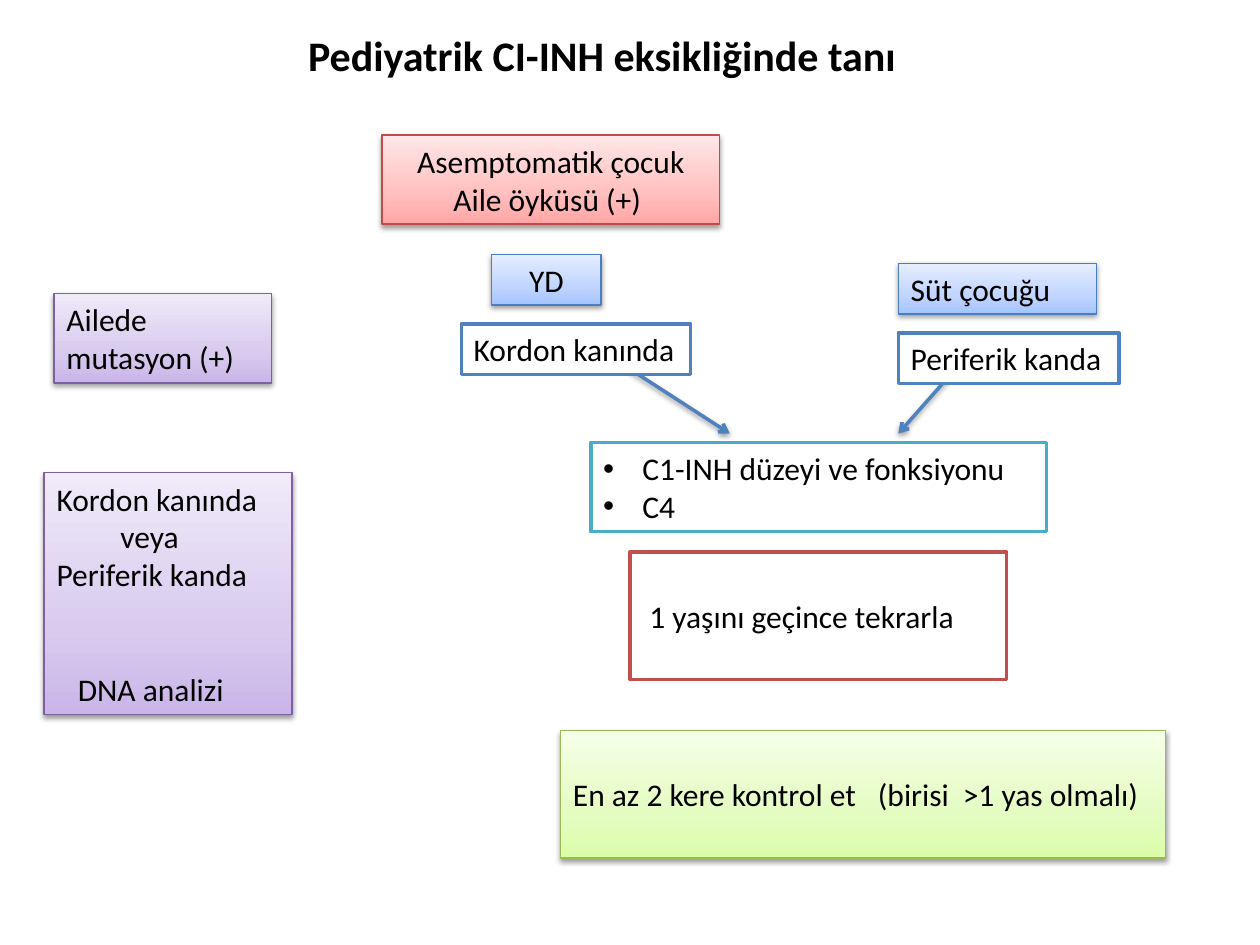
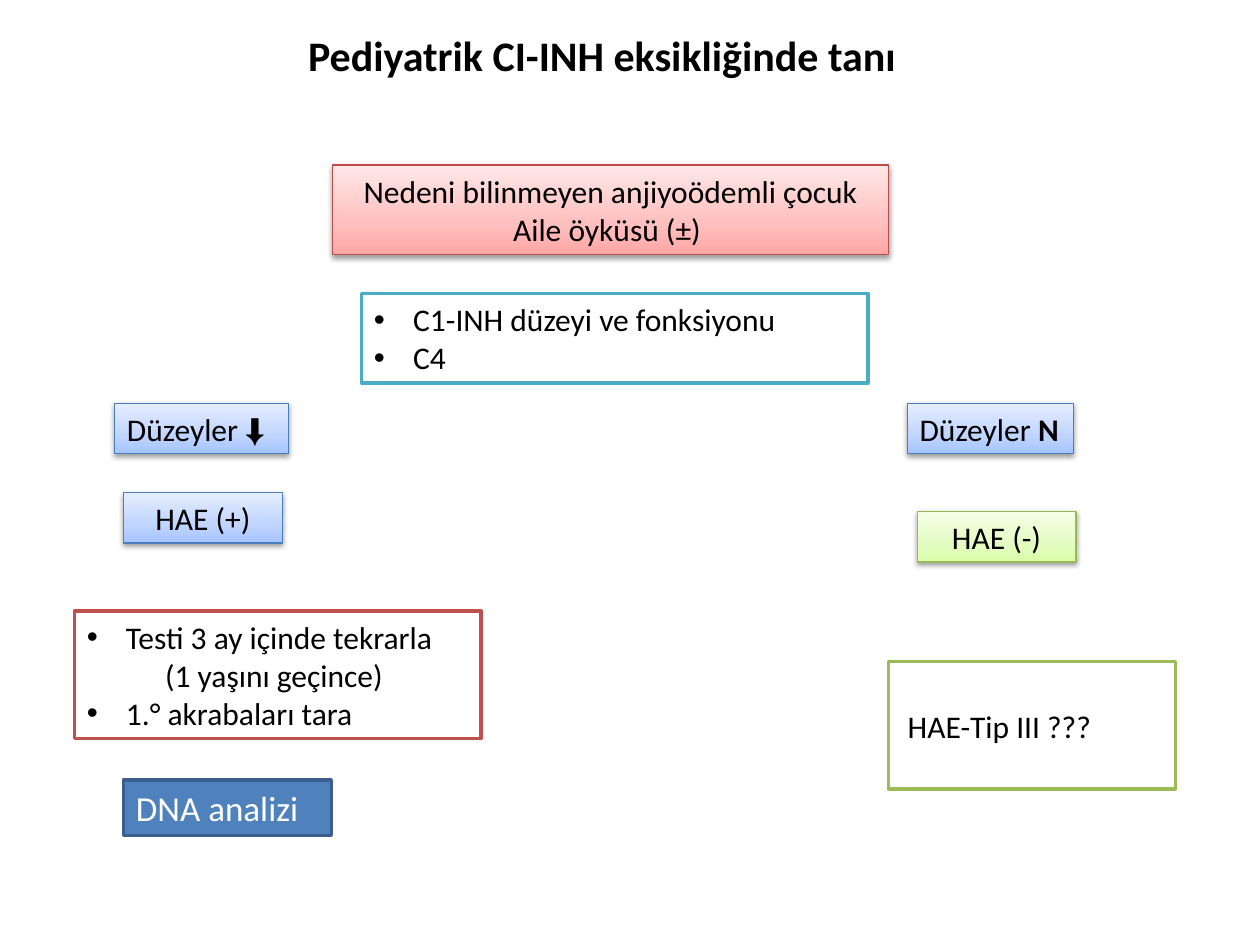
from copy import deepcopy
from dataclasses import dataclass, field

from lxml.etree import SubElement
from pptx import Presentation
from pptx.dml.color import RGBColor
from pptx.enum.shapes import MSO_CONNECTOR, MSO_SHAPE
from pptx.enum.text import MSO_ANCHOR, PP_ALIGN
from pptx.oxml.ns import qn
from pptx.util import Cm, Pt

TITLE = "Pediyatrik CI-INH eksikliğinde tanı"
ARROW_BLUE = "4F81BD"
GRADIENT_POSITIONS = (0, 0.35, 1)
LINE_H, PAIR_H, TALL_H = 1.02, 1.8, 2.57
TEXT = {"name": "Calibri", "size": Pt(18), "bold": False}
CENTER = {"alignment": PP_ALIGN.CENTER}

# A style with three fill colours is a raised box with a gradient.
STYLES = {
    "history": {"fill": ("FFA6A5", "FFC0BF", "FFE7E7"), "line": "BF4C48"},
    "group": {"fill": ("A4C4FF", "BFD4FF", "E6EEFF"), "line": "4B7EBC"},
    "outcome": {"fill": ("DAFDA7", "E4FCC2", "F5FFE7"), "line": "98B955"},
    "mutation": {"fill": ("C9B5E8", "D8CBEE", "F0EAF9"), "line": "7D60A0"},
    "lab": {"fill": ("FFFFFF",), "line": "4BACC6"},
    "repeat": {"fill": ("FFFFFF",), "line": "C0504D"},
    "sample": {"fill": ("FFFFFF",), "line": "4F81BD"},
    "question": {"fill": ("FFFFFF",), "line": "9BBB59"},
    "analysis": {"fill": ("4F81BD",), "line": "3A5F8C"},
}


@dataclass
class Box:
    left: float
    top: float
    width: float
    height: float

    def inner(self, dx, dy, width, height):
        return Box(self.left + dx, self.top + dy, width, height)

    def lengths(self):
        return [Cm(v) for v in (self.left, self.top, self.width, self.height)]


@dataclass
class Line:
    """A paragraph: more_runs are (text, font changes), lengths are in cm."""
    text: str
    layout: dict = field(default_factory=dict)
    more_runs: tuple = ()
    indent: float = 0
    bullet: bool = False
    tabs: tuple = ()


def rgb(hex_color):
    return RGBColor.from_string(hex_color)


def apply(target, values):
    for name, value in values.items():
        setattr(target, name, value)


def add_shadow(effects):
    shadow = SubElement(effects, qn("a:outerShdw"), blurRad="40000",
                        dist="20000", dir="5400000", rotWithShape="0")
    black = SubElement(shadow, qn("a:srgbClr"), val="000000")
    SubElement(black, qn("a:alpha"), val="38000")


def fill_gradient(shape, colors):
    shape.fill.gradient()
    shape.fill.gradient_angle = 90
    stops = shape.element.spPr.find(".//" + qn("a:gsLst"))
    stops.append(deepcopy(stops[0]))
    for stop, position, color in zip(shape.fill.gradient_stops,
                                     GRADIENT_POSITIONS, colors):
        stop.position = position
        stop.color.rgb = rgb(color)


def write_line(paragraph, line, color, size):
    apply(paragraph, {"alignment": PP_ALIGN.LEFT, **line.layout})
    properties = paragraph._p.get_or_add_pPr()
    if line.indent:
        properties.set("marL", str(Cm(line.indent)))
    if line.bullet:
        properties.set("marL", str(Cm(0.79)))
        properties.set("indent", str(-Cm(0.79)))
        SubElement(properties, qn("a:buFont"), typeface="Arial")
        SubElement(properties, qn("a:buChar"), char="•")
    if line.tabs:
        tab_list = SubElement(properties, qn("a:tabLst"))
        for position in line.tabs:
            SubElement(tab_list, qn("a:tab"), pos=str(Cm(position)), algn="l")
    for text, changes in ((line.text, {}), *line.more_runs):
        run = paragraph.add_run()
        run.text = text
        apply(run.font, {**TEXT, "size": Pt(size), **changes})
        run.font.color.rgb = rgb(color)


def add_step(slide, box, style, *lines, wrap=True, color="000000", size=18):
    step = slide.shapes.add_shape(MSO_SHAPE.RECTANGLE, *box.lengths())
    step.shadow.inherit = False
    fill, outline = STYLES[style]["fill"], STYLES[style]["line"]
    raised = len(fill) > 1
    if raised:
        fill_gradient(step, fill)
        add_shadow(step.element.spPr.find(qn("a:effectLst")))
    else:
        step.fill.solid()
        step.fill.fore_color.rgb = rgb(fill[0])
    step.line.color.rgb = rgb(outline)
    step.line.width = Pt(0.75 if raised else 2)
    frame = step.text_frame
    apply(frame, {"word_wrap": wrap, "vertical_anchor": MSO_ANCHOR.MIDDLE})
    for number, line in enumerate(lines):
        paragraph = frame.add_paragraph() if number else frame.paragraphs[0]
        write_line(paragraph, line, color, size)


def add_arrow(slide, box, start, end):
    """Draw an arrow between two points given relative to the box."""
    points = [Cm(v) for x, y in (start, end)
              for v in (box.left + x, box.top + y)]
    arrow = slide.shapes.add_connector(MSO_CONNECTOR.STRAIGHT, *points)
    arrow.line.color.rgb = rgb(ARROW_BLUE)
    arrow.line.width = Pt(2)
    properties = arrow.element.spPr
    SubElement(properties.find(qn("a:ln")), qn("a:tailEnd"), type="arrow")
    add_shadow(SubElement(properties, qn("a:effectLst")))


def add_titled_slide(deck):
    slide = deck.slides.add_slide(deck.slide_layouts.get_by_name("Title Only"))
    title = slide.shapes.title
    apply(title, dict(zip(("left", "top", "width", "height"),
                          Box(0.71, -0.48, 22.86, 3.18).lengths())))
    title.text_frame.vertical_anchor = MSO_ANCHOR.MIDDLE
    heading = title.text_frame.paragraphs[0]
    write_line(heading, Line(TITLE, CENTER), "000000", 24)
    heading.runs[0].font.bold = True
    return slide


def family_history(slide, box, child, sign):
    add_step(slide, box, "history", Line(child, CENTER),
             Line(f"Aile öyküsü ({sign}) ", CENTER))


def lab_tests(slide, box):
    add_step(slide, box, "lab",
             Line("C1-INH düzeyi ve fonksiyonu", bullet=True),
             Line("C4", bullet=True))


def mutation_branch(slide, box):
    add_step(slide, box.inner(0.2, 0, 4.39, PAIR_H), "mutation",
             Line("Ailede mutasyon (+)"))
    add_step(slide, box.inner(0, 3.61, box.width, 4.88), "mutation",
             Line("Kordon kanında"),
             Line("veya", indent=1.29),
             Line("Periferik kanda"),
             Line("DNA analizi", {"space_before": Pt(44)}, indent=0.43))


def age_groups(slide, box):
    infant_x = 8.81
    add_step(slide, box.inner(0.61, 0, 2.21, LINE_H), "group",
             Line("YD", CENTER))
    add_step(slide, box.inner(infant_x, 0.18, 3.99, LINE_H), "group",
             Line("Süt çocuğu"))
    add_arrow(slide, box, (10.59, 1.6), (infant_x, 3.61))
    add_arrow(slide, box, (2.61, 1.8), (5.41, 3.61))
    add_step(slide, box.inner(0, 1.4, 4.62, LINE_H), "sample",
             Line("Kordon kanında"), wrap=False)
    add_step(slide, box.inner(infant_x, 1.58, 4.45, LINE_H), "sample",
             Line("Periferik kanda"), wrap=False)


def follow_up(slide, box):
    lab_tests(slide, box.inner(0.61, 0, 9.19, PAIR_H))
    add_step(slide, box.inner(1.4, 2.21, 7.59, TALL_H), "repeat",
             Line("1 yaşını geçince tekrarla", indent=0.14))
    add_step(slide, box.inner(0, 5.81, box.width, TALL_H), "outcome",
             Line("En az 2 kere kontrol et\t(birisi\t>1 yas olmalı)",
                  tabs=(6.15, 7.86)))


def low_level_branch(slide, box):
    add_step(slide, box.inner(0.81, 0, 3.51, LINE_H), "group",
             Line("Düzeyler ", more_runs=(("⬇", {"name": "Arial"}),)),
             wrap=False)
    add_step(slide, box.inner(0.99, 1.8, 3.2, LINE_H), "group",
             Line("HAE (+)", CENTER))
    add_step(slide, box.inner(0, 4.19, box.width, TALL_H), "repeat",
             Line("Testi 3 ay içinde tekrarla", bullet=True),
             Line("(1 yaşını geçince)", indent=1.58),
             Line("1.° akrabaları tara", bullet=True))
    add_step(slide, box.inner(0.99, 7.59, 4.19, 1.12), "analysis",
             Line("DNA analizi"), color="FFFFFF", size=20)


def normal_level_branch(slide, box):
    add_step(slide, box.inner(0.38, 0, 3.35, LINE_H), "group",
             Line("Düzeyler", more_runs=((" N", {"bold": True}),)),
             wrap=False)
    add_step(slide, box.inner(0.58, 2.18, 3.2, LINE_H), "outcome",
             Line("HAE (-)", CENTER))
    add_step(slide, box.inner(0, 5.21, box.width, TALL_H), "question",
             Line("HAE-Tip III ???", indent=0.14))


def asymptomatic_child(deck):
    slide = add_titled_slide(deck)
    family_history(slide, Box(7.7, 2.72, 6.81, PAIR_H),
                   "Asemptomatik çocuk", "+")
    mutation_branch(slide, Box(0.89, 5.92, 5, 8.49))
    age_groups(slide, Box(9.3, 5.13, 13.26, 3.61))
    follow_up(slide, Box(11.3, 8.92, 12.19, 8.38))


def child_with_angioedema(deck):
    slide = add_titled_slide(deck)
    family_history(slide, Box(6.71, 3.33, 11.2, PAIR_H),
                   "Nedeni bilinmeyen anjiyoödemli çocuk", "±")
    lab_tests(slide, Box(7.29, 5.92, 10.21, PAIR_H))
    low_level_branch(slide, Box(1.5, 8.13, 8.2, 8.71))
    normal_level_branch(slide, Box(17.91, 8.13, 5.79, 7.78))


def main():
    deck = Presentation()
    apply(deck, {"slide_width": Cm(25.4), "slide_height": Cm(19.05)})
    asymptomatic_child(deck)
    child_with_angioedema(deck)
    deck.save("out.pptx")


if __name__ == "__main__":
    main()
